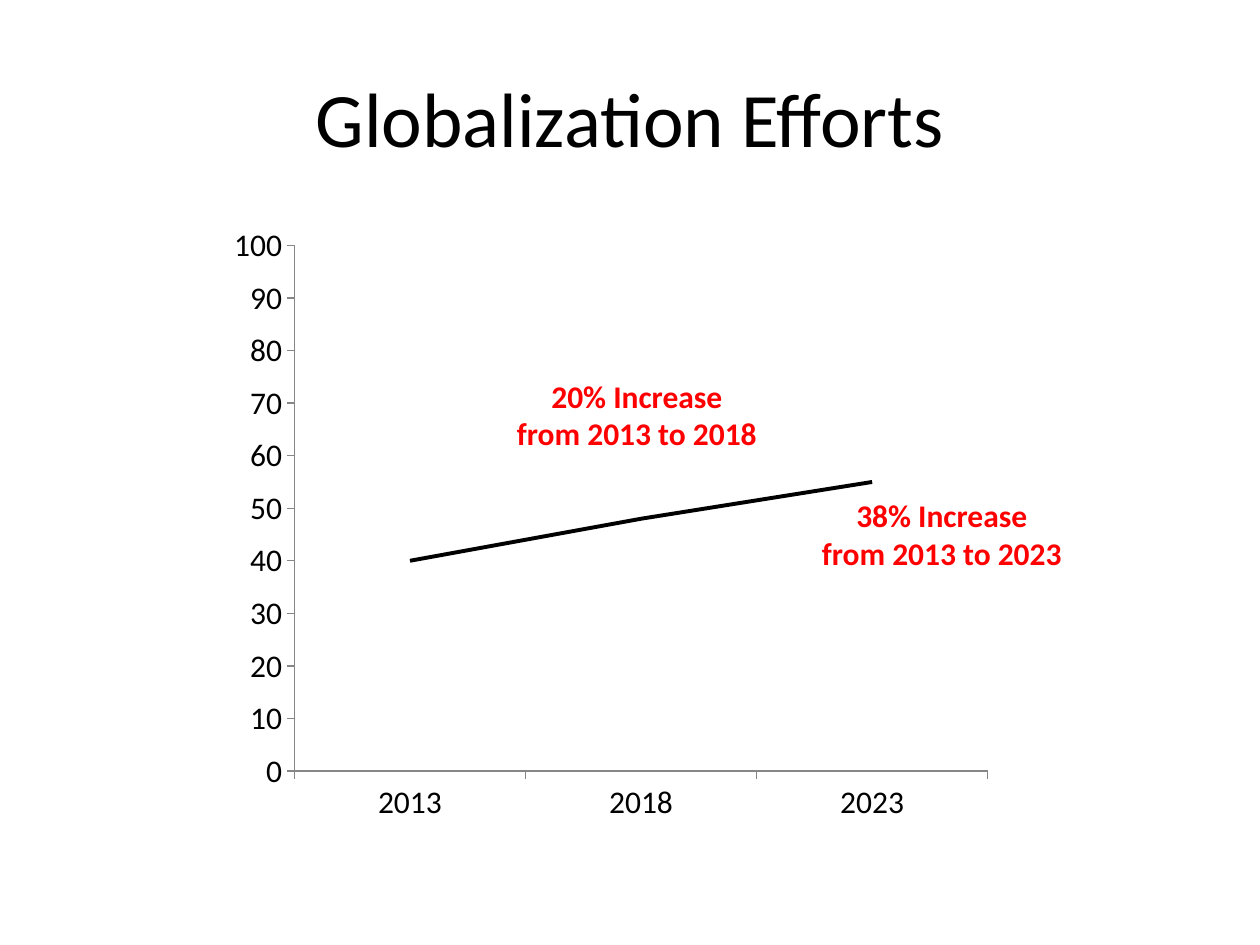
from lxml.etree import SubElement
from pptx import Presentation
from pptx.chart.data import CategoryChartData
from pptx.dml.color import RGBColor
from pptx.enum.chart import XL_CHART_TYPE, XL_TICK_MARK
from pptx.enum.text import MSO_ANCHOR, PP_ALIGN
from pptx.oxml.ns import qn
from pptx.util import Inches, Pt


def rgb(value):
    return RGBColor.from_string(value)


def set_font(font, size, color, bold=False):
    for name, value in {"name": "Calibri", "size": Pt(size), "bold": bold}.items():
        setattr(font, name, value)
    font.color.rgb = rgb(color)


prs = Presentation()
prs.slide_width, prs.slide_height = Inches(10), Inches(7.5)
s = prs.slides.add_slide(prs.slide_layouts[6])

data = CategoryChartData()
data.categories = ["2013", "2018", "2023"]
data.add_series("Series 1", [40, 48, 55])
chart = s.shapes.add_chart(
    XL_CHART_TYPE.LINE, Inches(1.67), Inches(1.75), Inches(6.67), Inches(4.95), data
).chart
chart.has_legend = False
chart.has_title = False
set_font(chart.font, 18, "000000")
chart.plots[0].vary_by_categories = False
series = chart.plots[0].series[0]
series.smooth = False
series.format.line.color.rgb = rgb("000000")
series.format.line.width = Pt(2.25)

for axis in (chart.category_axis, chart.value_axis):
    axis.has_major_gridlines = False
    axis.major_tick_mark = XL_TICK_MARK.OUTSIDE
    axis.minor_tick_mark = XL_TICK_MARK.NONE
    axis.format.line.color.rgb = rgb("868686")
    axis.format.line.width = Pt(0.75)
for name, value in {"minimum_scale": 0, "maximum_scale": 100, "major_unit": 10}.items():
    setattr(chart.value_axis, name, value)

plot_area = chart.plots[0]._element.getparent()
for old in plot_area.findall(qn("c:layout")):
    plot_area.remove(old)
layout = SubElement(plot_area, qn("c:layout"))
plot_area.insert(0, layout)
manual = SubElement(layout, qn("c:manualLayout"))
for tag, value in {
    "layoutTarget": "inner", "xMode": "edge", "yMode": "edge",
    "x": "0.1", "y": "0.04", "w": "0.825", "h": "0.843",
}.items():
    SubElement(manual, qn("c:" + tag)).set("val", value)

for left, top, width, height, lines, size, color, bold, wrap, anchor in [
    (0.5, 0.3, 9, 1.25, ["Globalization Efforts"], 44, "000000", False, True, MSO_ANCHOR.MIDDLE),
    (4, 2.94, 2.11, 0.71, ["20% Increase", "from 2013 to 2018"], 18, "FF0000", True, False, MSO_ANCHOR.TOP),
    (6.42, 3.89, 2.11, 0.71, ["38% Increase", "from 2013 to 2023"], 18, "FF0000", True, False, MSO_ANCHOR.TOP),
]:
    sp = s.shapes.add_textbox(Inches(left), Inches(top), Inches(width), Inches(height))
    tf = sp.text_frame
    tf.word_wrap = wrap
    tf.vertical_anchor = anchor
    for i, line in enumerate(lines):
        p = tf.add_paragraph() if i else tf.paragraphs[0]
        p.alignment = PP_ALIGN.CENTER
        r = p.add_run()
        r.text = line
        set_font(r.font, size, color, bold)

prs.save("out.pptx")
